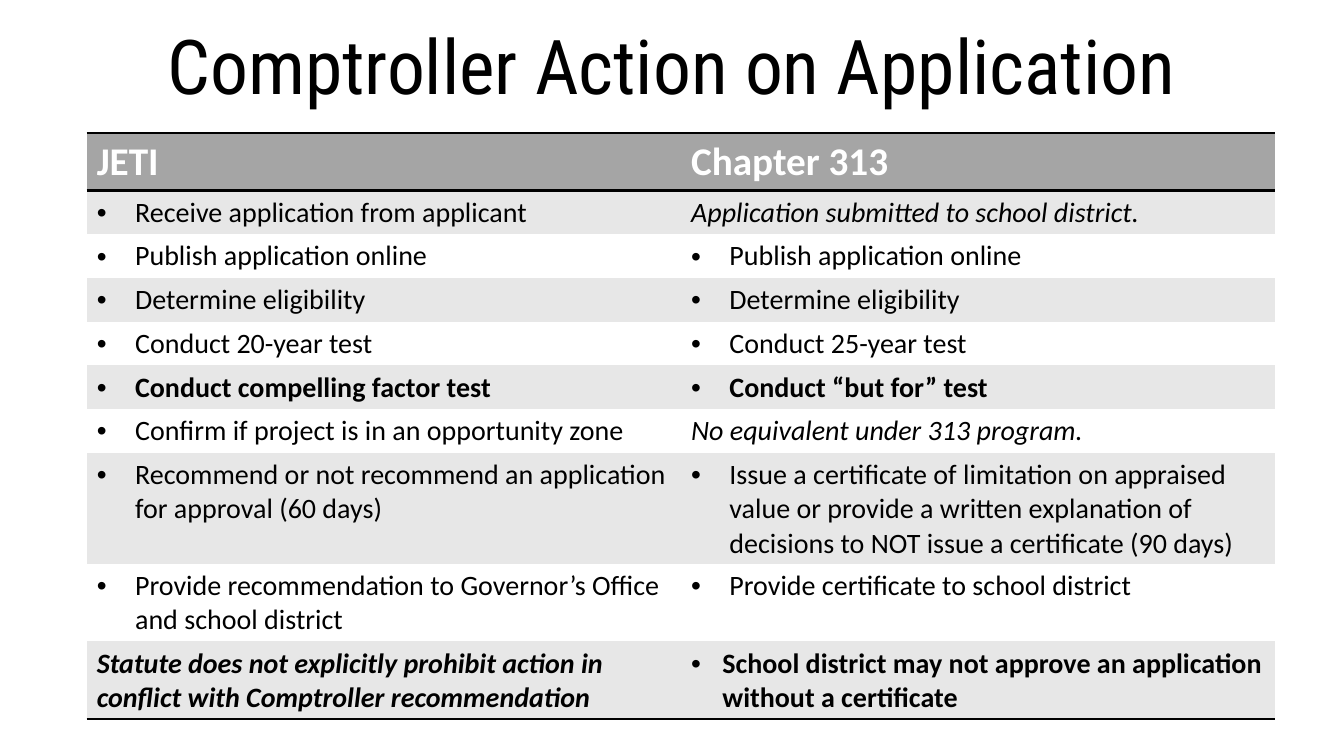
"""Build a slide comparing Comptroller action under JETI and Chapter 313."""
import pptx
import pptx.dml.color
import pptx.enum.text
import pptx.oxml
import pptx.oxml.ns
import pptx.util

Inches = pptx.util.Inches

TITLE = "Comptroller Action on Application"
PLAIN = {"bold": False, "italic": False}
BOLD = {"bold": True, "italic": False}
ITALIC = {"bold": False, "italic": True}
BOLD_ITALIC = {"bold": True, "italic": True}
INDENT = 0.38
LAST_INDENT = 0.31

HEADINGS = ["JETI", "Chapter 313"]
ROWS = [
    (0.43, ("Receive application from applicant", PLAIN, INDENT),
     ("Application submitted to school district.", ITALIC, 0)),
    (0.43, ("Publish application online", PLAIN, INDENT),
     ("Publish application online", PLAIN, INDENT)),
    (0.43, ("Determine eligibility", PLAIN, INDENT),
     ("Determine eligibility", PLAIN, INDENT)),
    (0.43, ("Conduct 20-year test", PLAIN, INDENT),
     ("Conduct 25-year test", PLAIN, INDENT)),
    (0.43, ("Conduct compelling factor test", BOLD, INDENT),
     ("Conduct “but for” test", BOLD, INDENT)),
    (0.43, ("Confirm if project is in an opportunity zone", PLAIN, INDENT),
     ("No equivalent under 313 program.", ITALIC, 0)),
    (1.1, ("Recommend or not recommend an application for approval (60 days)",
           PLAIN, INDENT),
     ("Issue a certificate of limitation on appraised value or provide a written "
      "explanation of decisions to NOT issue a certificate (90 days)", PLAIN, INDENT)),
    (0.77, ("Provide recommendation to Governor’s Office and school district",
            PLAIN, INDENT),
     ("Provide certificate to school district", PLAIN, INDENT)),
    (0.77, ("Statute does not explicitly prohibit action in conflict with "
            "Comptroller recommendation", BOLD_ITALIC, 0),
     ("School district may not approve an application without a certificate",
      BOLD, LAST_INDENT)),
]
HEADER_HEIGHT = 0.57
TABLE_LEFT, TABLE_TOP, TABLE_WIDTH = 0.86, 1.32, 11.79
NO_STYLE = "{2D5ABB26-0587-4C30-8999-92F81FD0307C}"


def color(value):
    return pptx.dml.color.RGBColor.from_string(value)


def element(markup):
    namespace = pptx.oxml.ns.nsdecls("a")
    return pptx.oxml.parse_xml(markup.replace(">", f" {namespace}>", 1))


def write(para, text, size, font, ink, style):
    span = para.add_run()
    span.text = text
    settings = {"size": pptx.util.Pt(size), "name": font, **style}
    for name, value in settings.items():
        setattr(span.font, name, value)
    span.font.color.rgb = color(ink)


def add_bullet(para, indent):
    properties = para._p.get_or_add_pPr()
    properties.set("marL", str(Inches(indent)))
    properties.set("indent", str(-Inches(indent)))
    properties.append(element('<a:buFont typeface="Arial"></a:buFont>'))
    properties.append(element('<a:buChar char="•"></a:buChar>'))


def fill_cell(cell, content, size, ink, fill, edges):
    text, style, indent = content
    para = cell.text_frame.paragraphs[0]
    write(para, text, size, "Calibri", ink, style)
    if indent:
        add_bullet(para, indent)
    cell.fill.solid()
    cell.fill.fore_color.rgb = color(fill)
    for position, edge in enumerate(edges):
        border = element(
            f'<a:ln{edge} w="{pptx.util.Pt(2)}"><a:solidFill>'
            f'<a:srgbClr val="000000"/></a:solidFill></a:ln{edge}>')
        cell._tc.get_or_add_tcPr().insert(position, border)


def add_title(page):
    box = page.shapes.add_textbox(Inches(1.33), Inches(0.14), Inches(10.67), Inches(1.01))
    box.text_frame.word_wrap = True
    para = box.text_frame.paragraphs[0]
    para.alignment = pptx.enum.text.PP_ALIGN.CENTER
    write(para, TITLE, 54, "Roboto Condensed", "000000", PLAIN)


def add_comparison(page):
    heights = [HEADER_HEIGHT] + [row[0] for row in ROWS]
    frame = page.shapes.add_table(
        len(heights), len(HEADINGS), Inches(TABLE_LEFT), Inches(TABLE_TOP),
        Inches(TABLE_WIDTH), Inches(sum(heights)))
    table = frame.table
    table.horz_banding = False
    table._tbl.tblPr.find(pptx.oxml.ns.qn("a:tableStyleId")).text = NO_STYLE
    for row, height in zip(table.rows, heights):
        row.height = Inches(height)
    for column, heading in enumerate(HEADINGS):
        fill_cell(table.cell(0, column), (heading, BOLD, 0), 28, "FFFFFF", "A5A5A5", "TB")
    for number, (_, *contents) in enumerate(ROWS, start=1):
        fill = "E7E7E7" if number % 2 else "FFFFFF"
        edges = "B" if number == len(ROWS) else ""
        for column, content in enumerate(contents):
            fill_cell(table.cell(number, column), content, 20, "000000", fill, edges)


def main():
    deck = pptx.Presentation()
    deck.slide_width, deck.slide_height = Inches(13.33), Inches(7.5)
    page = deck.slides.add_slide(deck.slide_layouts[6])
    add_title(page)
    add_comparison(page)
    deck.save("out.pptx")


if __name__ == "__main__":
    main()
